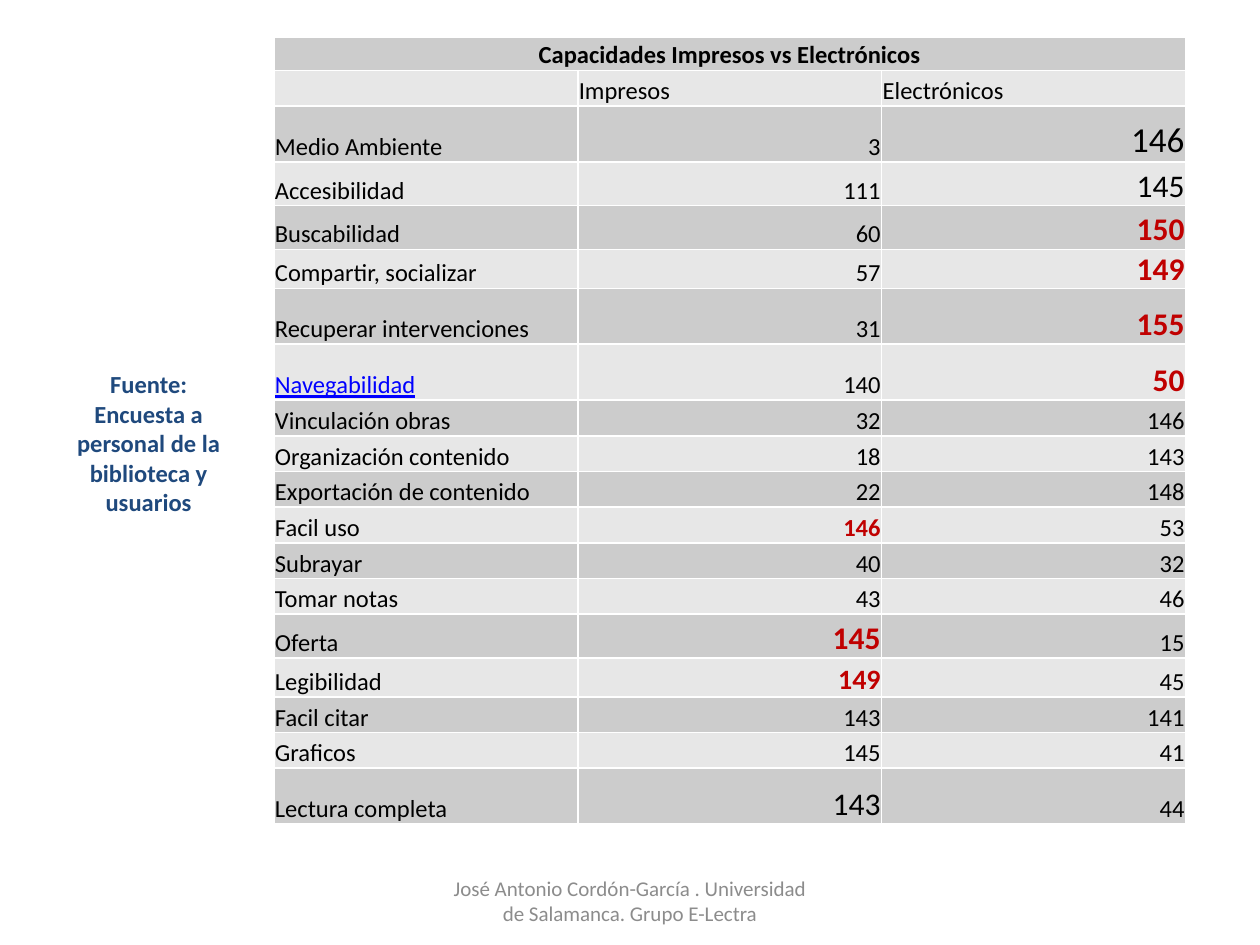
from lxml.etree import SubElement as Sub
from pptx import Presentation
from pptx.dml.color import RGBColor
from pptx.enum.text import MSO_ANCHOR as Anchor, PP_ALIGN as Align
from pptx.oxml.ns import qn
from pptx.util import Pt

BLACK = RGBColor(0, 0, 0)
WHITE = RGBColor(255, 255, 255)
RED = RGBColor(0xC0, 0, 0)
BLUE = RGBColor(0, 0, 255)
NAVY = RGBColor(0x1F, 0x49, 0x7D)
GRAY = RGBColor(0x8C, 0x8C, 0x8C)
DARK = RGBColor(0xCC, 0xCC, 0xCC)
LIGHT = RGBColor(0xE7, 0xE7, 0xE7)


def write(frame, text, size=14, color=BLACK, bold=False, line=False, align=Align.LEFT):
    para = frame.paragraphs[0]
    para.alignment = align
    if not text:
        para._p.get_or_add_endParaRPr().set("sz", str(size * 100))
        return
    run = para.add_run()
    run.text = text
    font = run.font
    font.name = "Calibri"
    font.size = Pt(size)
    font.bold = bold
    font.underline = line
    font.color.rgb = color


def edge(cell):
    props = cell._tc.get_or_add_tcPr()
    for side in ("lnL", "lnR", "lnT", "lnB"):
        line = Sub(props, qn(f"a:{side}"), w=str(Pt(1)))
        fill = Sub(line, qn("a:solidFill"))
        Sub(fill, qn("a:srgbClr"), val=str(WHITE))


deck = Presentation()
deck.slide_width, deck.slide_height = Pt(720), Pt(540)
slide = deck.slides.add_slide(deck.slide_layouts[6])

foot = slide.shapes.add_textbox(Pt(246), Pt(500.5), Pt(228), Pt(28.75)).text_frame
foot.word_wrap = True
foot.vertical_anchor = Anchor.MIDDLE
write(foot, "José Antonio Cordón-García . Universidad de Salamanca. Grupo E-Lectra",
      size=12, color=GRAY, align=Align.CENTER)

rows = [
    (19, "Capacidades Impresos vs Electrónicos", "", ""),
    (20.4, "", "Impresos", "Electrónicos"),
    (32, "Medio Ambiente", "3", "146"),
    (25, "Accesibilidad", "111", "145"),
    (25, "Buscabilidad", "60", "150"),
    (20.4, "Compartir, socializar", "57", "149"),
    (32, "Recuperar intervenciones", "31", "155"),
    (32, "Navegabilidad", "140", "50"),
    (20.4, "Vinculación obras", "32", "146"),
    (20.4, "Organización contenido", "18", "143"),
    (20.4, "Exportación de contenido", "22", "148"),
    (20.4, "Facil uso", "146", "53"),
    (20.4, "Subrayar", "40", "32"),
    (20.4, "Tomar notas", "43", "46"),
    (25, "Oferta", "145", "15"),
    (22.3, "Legibilidad", "149", "45"),
    (20.4, "Facil citar", "143", "141"),
    (20.4, "Graficos", "145", "41"),
    (32, "Lectura completa", "143", "44"),
]
hot = dict(color=RED, bold=True)
looks = {
    (0, 0): dict(bold=True, align=Align.CENTER),
    (2, 2): dict(size=20),
    (3, 2): dict(size=18),
    (7, 0): dict(color=BLUE, line=True),
    (11, 1): hot,
    (14, 1): dict(hot, size=18),
    (15, 1): dict(hot, size=16),
    (18, 1): dict(size=18),
}
for r in range(4, 8):
    looks[r, 2] = dict(hot, size=18)

high = sum(row[0] for row in rows)
grid = slide.shapes.add_table(len(rows), 3, Pt(156.5), Pt(21.2), Pt(521), Pt(high)).table
for col in grid.columns:
    col.width = Pt(173.67)
for r, (tall, *texts) in enumerate(rows):
    grid.rows[r].height = Pt(tall)
    for c, text in enumerate(texts):
        cell = grid.cell(r, c)
        edge(cell)
        cell.fill.solid()
        cell.fill.fore_color.rgb = LIGHT if r % 2 else DARK
        cell.vertical_anchor = Anchor.BOTTOM
        cell.margin_left = cell.margin_right = cell.margin_top = Pt(0.6)
        cell.margin_bottom = Pt(0)
        side = Align.RIGHT if r > 1 and c else Align.LEFT
        write(cell.text_frame, text, **{"align": side, **looks.get((r, c), {})})
grid.cell(0, 0).merge(grid.cell(0, 2))

note = slide.shapes.add_textbox(Pt(36.7), Pt(207.5), Pt(96.5), Pt(92)).text_frame
note.word_wrap = True
write(note, "Fuente: Encuesta a personal de la biblioteca y usuarios",
      color=NAVY, bold=True, align=Align.CENTER)

deck.save("out.pptx")
